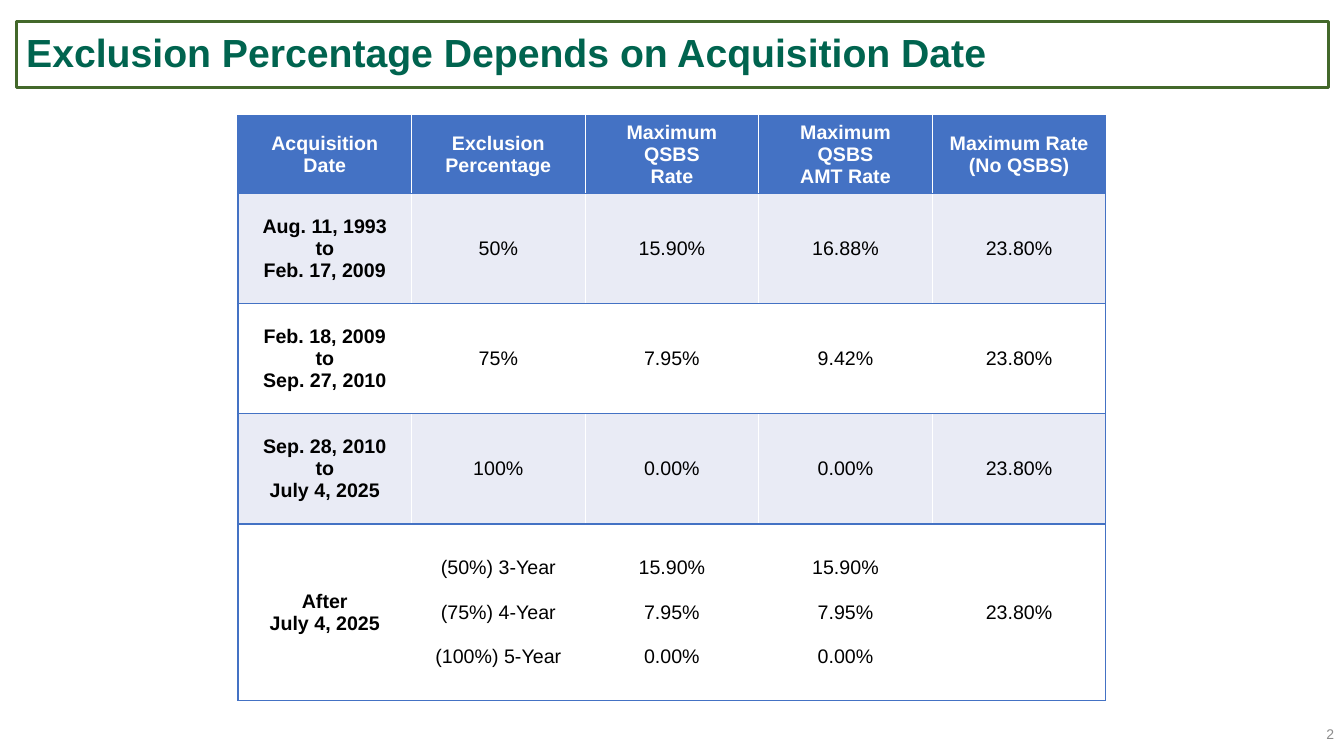
"""Build a slide with a table of exclusion percentages by acquisition date."""
import pptx
import pptx.dml.color
import pptx.enum.text
import pptx.oxml
import pptx.oxml.ns
import pptx.util

Pt = pptx.util.Pt
ALIGN = pptx.enum.text.PP_ALIGN
MIDDLE = pptx.enum.text.MSO_ANCHOR.MIDDLE

HEX = {
    "title": "00644F",
    "frame": "43682A",
    "head": "4472C4",
    "band": "E9EBF5",
    "white": "FFFFFF",
    "black": "000000",
    "number": "8C8C8C",
}

HEADS = ["Acquisition\nDate", "Exclusion\nPercentage", "Maximum\nQSBS\nRate",
         "Maximum\nQSBS\nAMT Rate", "Maximum Rate\n(No QSBS)"]
ROWS = [
    ["Aug. 11, 1993\nto\nFeb. 17, 2009", "50%", "15.90%", "16.88%", "23.80%"],
    ["Feb. 18, 2009\nto\nSep. 27, 2010", "75%", "7.95%", "9.42%", "23.80%"],
    ["Sep. 28, 2010\nto\nJuly 4, 2025", "100%", "0.00%", "0.00%", "23.80%"],
    ["After\nJuly 4, 2025", "(50%) 3-Year\n(75%) 4-Year\n(100%) 5-Year",
     "15.90%\n7.95%\n0.00%", "15.90%\n7.95%\n0.00%", "23.80%"],
]
HEIGHTS = [55.2, 78.8, 78.8, 78.8, 126]
WIDTH = 124


def color(name):
    """Return the named colour."""
    return pptx.dml.color.RGBColor.from_string(HEX[name])


def write(frame, text, size, tint, bold, align, gap=0):
    """Write each line of text as a paragraph with one run."""
    for i, line in enumerate(text.split("\n")):
        para = frame.add_paragraph() if i else frame.paragraphs[0]
        para.alignment = align
        if i and gap:
            para.space_before = Pt(gap)
        run = para.add_run()
        run.text = line
        run.font.name = "Arial"
        run.font.size = Pt(size)
        run.font.bold = bold
        run.font.color.rgb = color(tint)


def add_title(slide, text):
    """Place the framed title."""
    title = slide.shapes.title
    title.left, title.top = Pt(11.5), Pt(15.1)
    title.width, title.height = Pt(937.4), Pt(47.5)
    title.line.color.rgb = color("frame")
    title.line.width = Pt(2)
    frame = title.text_frame
    frame.vertical_anchor = MIDDLE
    frame.auto_size = pptx.enum.text.MSO_AUTO_SIZE.NONE
    write(frame, text, 28, "title", True, ALIGN.LEFT)
    frame.paragraphs[0].line_spacing = 0.9


def add_number(slide, text):
    """Place the slide number in the lower right corner."""
    box = slide.shapes.add_textbox(Pt(931.7), Pt(509.8), Pt(28.3), Pt(28.8))
    box.text_frame.word_wrap = True
    box.text_frame.vertical_anchor = MIDDLE
    write(box.text_frame, text, 10, "number", False, ALIGN.RIGHT)


def add_edges(cell, sides):
    """Draw lines on the given sides of a cell, in the order L, R, T, B."""
    props = cell._tc.get_or_add_tcPr()
    space = pptx.oxml.ns.nsdecls("a")
    for side in sides:
        props.append(pptx.oxml.parse_xml(
            f'<a:ln{side} {space} w="12700"><a:solidFill>'
            f'<a:srgbClr val="{HEX["head"]}"/></a:solidFill></a:ln{side}>'))


def fill_cell(cell, text, fill, tint, bold, sides, gap):
    """Set the look and the text of one table cell."""
    add_edges(cell, sides)
    cell.fill.solid()
    cell.fill.fore_color.rgb = color(fill)
    cell.vertical_anchor = MIDDLE
    cell.margin_left = cell.margin_right = Pt(5.4)
    cell.margin_top = cell.margin_bottom = Pt(0)
    write(cell.text_frame, text, 14, tint, bold, ALIGN.CENTER, gap)


def add_grid(slide):
    """Place the table of rates."""
    data = [HEADS] + ROWS
    last = len(HEADS) - 1
    table = slide.shapes.add_table(
        len(data), len(HEADS), Pt(170), Pt(82.8),
        Pt(WIDTH * len(HEADS)), Pt(sum(HEIGHTS))).table
    for col in table.columns:
        col.width = Pt(WIDTH)
    for r, texts in enumerate(data):
        table.rows[r].height = Pt(HEIGHTS[r])
        fill = "head" if r == 0 else "band" if r % 2 else "white"
        tint = "black" if r else "white"
        for c, text in enumerate(texts):
            sides = {0: "LTB", last: "RTB"}.get(c, "TB")
            gap = 15.8 if r == len(ROWS) and c else 0
            fill_cell(table.cell(r, c), text, fill, tint,
                      r == 0 or c == 0, sides, gap)


def main():
    """Build and save the slide."""
    deck = pptx.Presentation()
    deck.slide_width, deck.slide_height = Pt(960), Pt(540)
    slide = deck.slides.add_slide(deck.slide_layouts[5])
    add_title(slide, "Exclusion Percentage Depends on Acquisition Date")
    add_number(slide, "2")
    add_grid(slide)
    deck.save("out.pptx")


if __name__ == "__main__":
    main()
